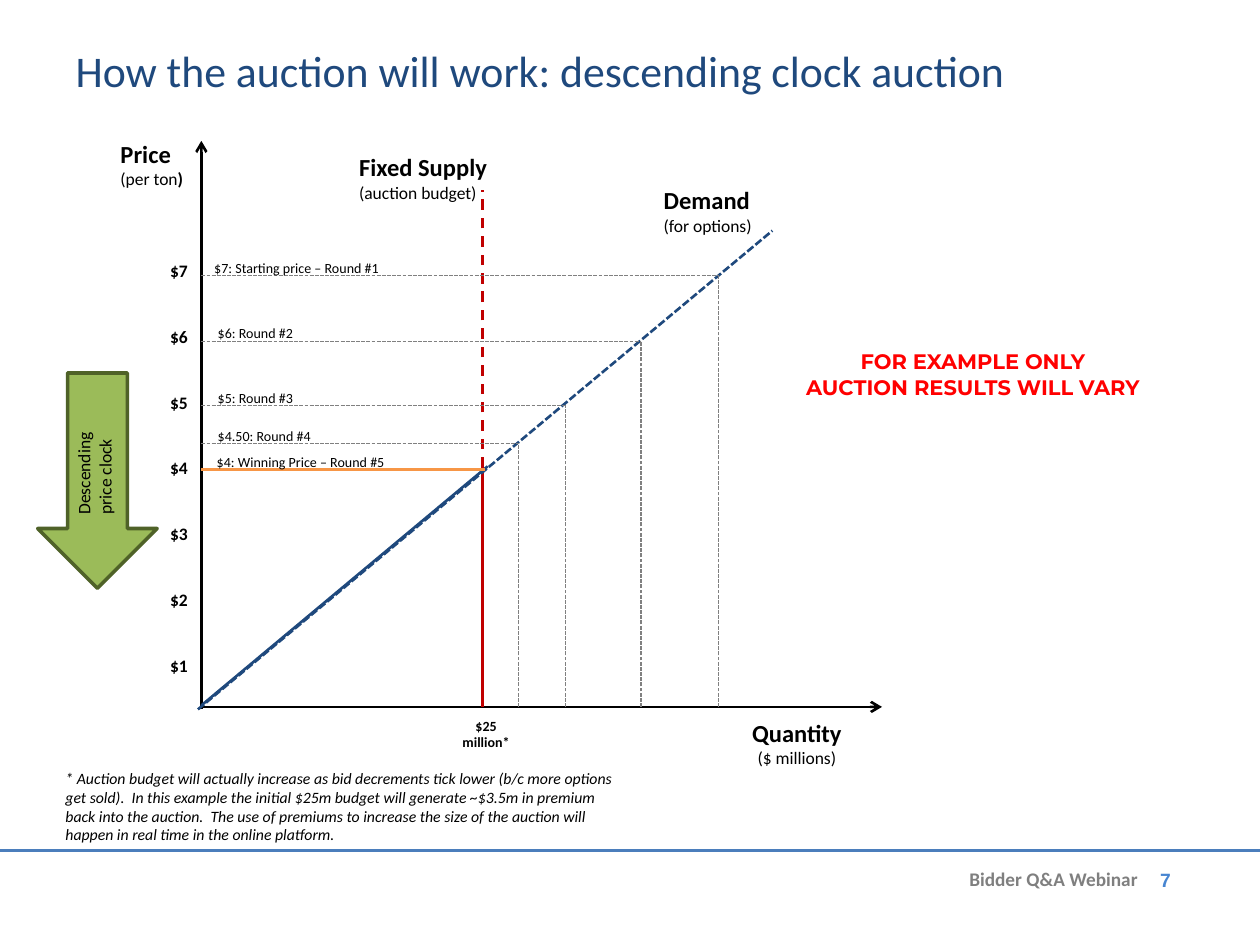
import lxml.etree
import pptx
import pptx.dml.color
import pptx.enum.dml
import pptx.enum.shapes
import pptx.enum.text
import pptx.oxml.ns
import pptx.util

Cm, Pt = pptx.util.Cm, pptx.util.Pt
qn = pptx.oxml.ns.qn
hex_color = pptx.dml.color.RGBColor.from_string
ALIGN = pptx.enum.text.PP_ALIGN
ANCHOR = pptx.enum.text.MSO_ANCHOR
DASH = pptx.enum.dml.MSO_LINE.DASH
SHORT_DASH = pptx.enum.dml.MSO_LINE.SQUARE_DOT

BLACK, NAVY, RED, GRAY = "000000", "1F497D", "C00000", "808080"

deck = pptx.Presentation()
deck.slide_width, deck.slide_height = Cm(25.4), Cm(19.05)
page = deck.slides.add_slide(deck.slide_layouts[5])


def add_text(paras, left, top, width, height, *, box=None, size=10, color=BLACK,
             font="Calibri", bold=False, italic=False, align=ALIGN.LEFT,
             anchor=ANCHOR.TOP, inset=True):
    """Fill a box; a paragraph is a string or a list of (text, size, bold) spans."""
    if box is None:
        box = page.shapes.add_textbox(0, 0, 0, 0)
    box.left, box.top, box.width, box.height = Cm(left), Cm(top), Cm(width), Cm(height)
    frame = box.text_frame
    frame.word_wrap = True
    frame.auto_size = pptx.enum.text.MSO_AUTO_SIZE.NONE
    frame.vertical_anchor = anchor
    if not inset:
        frame.margin_left = frame.margin_right = frame.margin_top = frame.margin_bottom = 0
    for index, spans in enumerate(paras):
        para = frame.add_paragraph() if index else frame.paragraphs[0]
        para.alignment = align
        if isinstance(spans, str):
            spans = [(spans, size, bold)]
        for text, span_size, span_bold in spans:
            span = para.add_run()
            span.text = text
            span.font.name = font
            span.font.size = Pt(span_size)
            span.font.bold = span_bold
            span.font.italic = italic
            span.font.color.rgb = hex_color(color)
    return box


def add_line(x1, y1, x2, y2, *, color=BLACK, width=1.5, dash=None, arrow=False):
    connector = page.shapes.add_connector(
        pptx.enum.shapes.MSO_CONNECTOR.STRAIGHT, Cm(x1), Cm(y1), Cm(x2), Cm(y2))
    connector.line.color.rgb = hex_color(color)
    connector.line.width = Pt(width)
    if dash is not None:
        connector.line.dash_style = dash
    if arrow:
        lxml.etree.SubElement(connector.line._get_or_add_ln(), qn("a:tailEnd"), type="arrow")
    lxml.etree.SubElement(connector._element.spPr, qn("a:effectLst"))


# Title and footer
add_text(["How the auction will work: descending clock auction"], 1.27, 0.76, 22.86, 1.3,
         box=page.shapes.title, size=25, color=NAVY)
add_line(0, 17.15, 25.4, 17.15, color="4B7EBC")
add_text(["Bidder Q&A Webinar"], 8.69, 17.35, 14.5, 0.74,
         size=11, color="7F7F7F", bold=True, align=ALIGN.RIGHT)
add_text(["7"], 23.14, 17.37, 1.12, 0.89, size=11, color="4785D1", font="Arial", bold=True)

# Axes, supply and demand
axis_x, axis_y = 4.06, 14.25
supply_x, clearing_y = 9.73, 9.47
add_line(supply_x, axis_y, supply_x, 3.84, color=RED, dash=DASH)
add_line(axis_x, 14.3, axis_x, 2.84, arrow=True)
add_line(axis_x, axis_y, 17.78, axis_y, arrow=True)
add_line(supply_x, axis_y, supply_x, clearing_y, color=RED)
add_line(3.99, 14.3, 15.57, 4.65, color=NAVY, dash=SHORT_DASH)
add_line(axis_x, 14.22, 9.83, 9.4, color=NAVY)

headings = [
    ("Price", [("(per ton", 10, False), (")", 10, True)], 2.18, 2.67, 2.84, ALIGN.LEFT),
    ("Quantity", [("($ millions)", 10, False)], 13.59, 14.35, 4.95, ALIGN.CENTER),
    ("Fixed Supply", [("(auction budget)", 10, False)], 6.99, 2.95, 4.95, ALIGN.LEFT),
    ("Demand", [("(for options)", 10, False)], 13.13, 3.61, 4.95, ALIGN.LEFT),
]
for heading, unit, left, top, width, align in headings:
    add_text([[(heading, 14, True)], unit], left, top, width, 1.96, align=align)

# Descending price arrow
arrow = page.shapes.add_shape(pptx.enum.shapes.MSO_SHAPE.DOWN_ARROW,
                              Cm(0.76), Cm(7.52), Cm(2.41), Cm(4.34))
arrow.shadow.inherit = False
arrow.fill.solid()
arrow.fill.fore_color.rgb = hex_color("9BBB59")
arrow.line.color.rgb = hex_color("4F6228")
arrow.line.width = Pt(2)
clock = add_text(["Descending", "price clock"], -0.64, 7.14, 5.82, 1.14)
clock.rotation = 270
clock.text_frame.paragraphs[0].line_spacing = Pt(2)

# Axis labels
for step in range(7):
    add_text([f"${7 - step}"], 3.43, 5 + 1.33 * step, 1.42, 0.89,
             bold=True, anchor=ANCHOR.MIDDLE, inset=False)
add_text(["$25 million*"], 9.09, 14.35, 1.42, 0.89, size=8, bold=True,
         align=ALIGN.CENTER, anchor=ANCHOR.MIDDLE, inset=False)

# Bidding rounds: level of the price, quantity demanded, label and its left edge
rounds = [
    (5.56, 14.49, "$7: Starting price – Round #1", 4.32),
    (6.88, 12.92, "$6: Round #2", 4.39),
    (8.18, 11.4, "$5: Round #3", 4.39),
    (8.94, 10.45, "$4.50: Round #4", 4.39),
    (clearing_y, 9.78, "$4: Winning Price – Round #5", 4.37),
]
for price_y, quantity_x, label, label_left in rounds:
    if price_y == clearing_y:
        add_line(axis_x, price_y, quantity_x, price_y, color="F79646")
    else:
        add_line(axis_x, price_y, quantity_x, price_y, color=GRAY, width=0.75, dash=SHORT_DASH)
        add_line(quantity_x, axis_y, quantity_x, price_y, color=GRAY, width=0.75, dash=SHORT_DASH)
    add_text([label], label_left, price_y - 0.33, 5.3, 0.51, size=8, inset=False)

# Notes
add_text(["FOR EXAMPLE ONLY", "AUCTION RESULTS WILL VARY"], 14.88, 6.91, 9.47, 1.3,
         size=12, color="FF0000", font="Montserrat", bold=True, align=ALIGN.CENTER)
add_text(["* Auction budget will actually increase as bid decrements tick lower (b/c more "
          "options get sold).  In this example the initial $25m budget will generate ~$3.5m "
          "in premium back into the auction.  The use of premiums to increase the size of "
          "the auction will happen in real time in the online platform."],
         1.32, 15.49, 11.13, 1.32, size=9, italic=True, inset=False)

deck.save("out.pptx")
